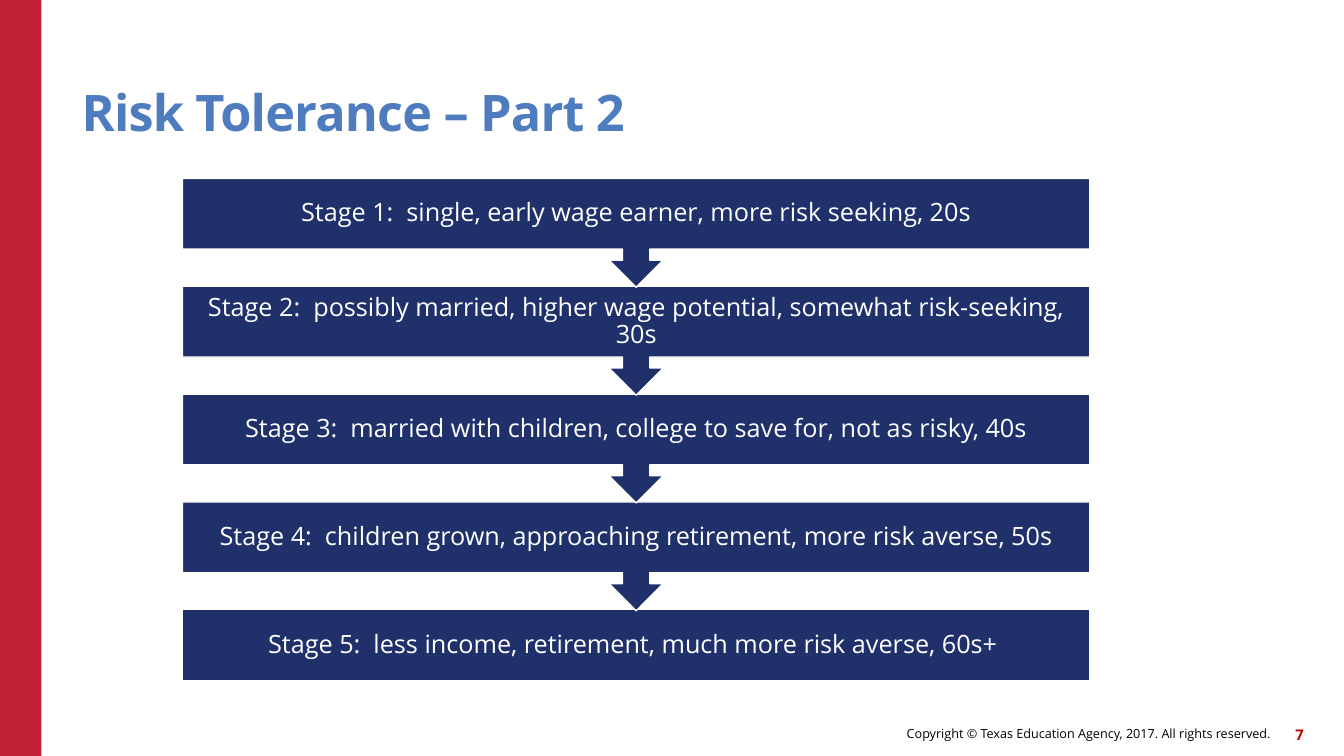
from pptx import Presentation
from pptx.dml.color import RGBColor
from pptx.enum.shapes import MSO_SHAPE as Shape
from pptx.enum.text import MSO_ANCHOR as Anchor, PP_ALIGN as Align
from pptx.util import Inches, Pt

RED, NAVY, BLUE, WHITE = "C02033", "20306A", "4E7CBE", "FFFFFF"
STAGES = [
    "Stage 1:  single, early wage earner, more risk seeking, 20s",
    "Stage 2:  possibly married, higher wage potential, somewhat risk-seeking, 30s",
    "Stage 3:  married with children, college to save for, not as risky, 40s",
    "Stage 4:  children grown, approaching retirement, more risk averse, 50s",
    "Stage 5:  less income, retirement, much more risk averse, 60s+ ",
]
STAGE_TOP, STAGE_PITCH = 1.77, 1.07
BOX_HEIGHT, CALLOUT_HEIGHT = 0.7, 1.08


def color(value):
    return RGBColor.from_string(value)


class SlideBuilder:
    """Holds the slide and its font, and adds styled elements."""

    def __init__(self, slide, font_name):
        self.slide = slide
        self.font_name = font_name

    def set_text(self, shape, text, size, hex_color, align, anchor=Anchor.MIDDLE,
                 bold=False, inset=0, line_spacing=None):
        frame = shape.text_frame
        frame.word_wrap = True
        frame.vertical_anchor = anchor
        frame.margin_left = frame.margin_right = Inches(inset)
        frame.margin_top = frame.margin_bottom = Inches(inset)
        paragraph = frame.paragraphs[0]
        paragraph.text = text
        paragraph.alignment = align
        paragraph.line_spacing = line_spacing
        font = paragraph.font
        font.name, font.size, font.bold = self.font_name, Pt(size), bold
        font.color.rgb = color(hex_color)
        return paragraph

    def title(self, text, left, top, width, height):
        title = self.slide.shapes.title
        title.left, title.top = Inches(left), Inches(top)
        title.width, title.height = Inches(width), Inches(height)
        paragraph = self.set_text(title, text, 36, BLUE, Align.LEFT,
                                  Anchor.BOTTOM, bold=True, line_spacing=0.9)
        paragraph.runs[0]._r.get_or_add_rPr().set("spc", "-60")

    def label(self, text, left, top, width, height, size, hex_color, bold=False):
        box = self.slide.shapes.add_textbox(
            Inches(left), Inches(top), Inches(width), Inches(height))
        self.set_text(box, text, size, hex_color, Align.RIGHT, bold=bold)

    def block(self, kind, left, top, width, height, fill, outline=None):
        shape = self.slide.shapes.add_shape(
            kind, Inches(left), Inches(top), Inches(width), Inches(height))
        shape.shadow.inherit = False
        shape.fill.solid()
        shape.fill.fore_color.rgb = color(fill)
        if outline:
            shape.line.color.rgb = color(outline)
            shape.line.width = Pt(1)
        else:
            shape.line.fill.background()
        return shape

    def stage(self, text, top, is_last):
        kind = Shape.RECTANGLE if is_last else Shape.DOWN_ARROW_CALLOUT
        height = BOX_HEIGHT if is_last else CALLOUT_HEIGHT
        shape = self.block(kind, 1.81, top, 9, height, NAVY, WHITE)
        self.set_text(shape, text, 18, WHITE, Align.CENTER, inset=0.14,
                      line_spacing=0.9)


def main():
    presentation = Presentation()
    presentation.slide_width, presentation.slide_height = Inches(13.33), Inches(7.5)
    slide = presentation.slides.add_slide(presentation.slide_layouts[5])
    builder = SlideBuilder(slide, "Open Sans")

    builder.block(Shape.RECTANGLE, 0, 0, 0.41, 7.5, RED)
    builder.label("Copyright © Texas Education Agency, 2017. All rights reserved.",
                  6.14, 7.12, 6.46, 0.32, 9, "000000")
    builder.label("7", 12.51, 7.13, 0.42, 0.32, 10.5, "C00000", bold=True)
    builder.title("Risk Tolerance – Part 2", 0.81, 0.45, 11, 0.96)

    last = len(STAGES) - 1
    for index, text in reversed(list(enumerate(STAGES))):
        builder.stage(text, STAGE_TOP + index * STAGE_PITCH, index == last)

    presentation.save("out.pptx")


if __name__ == "__main__":
    main()
